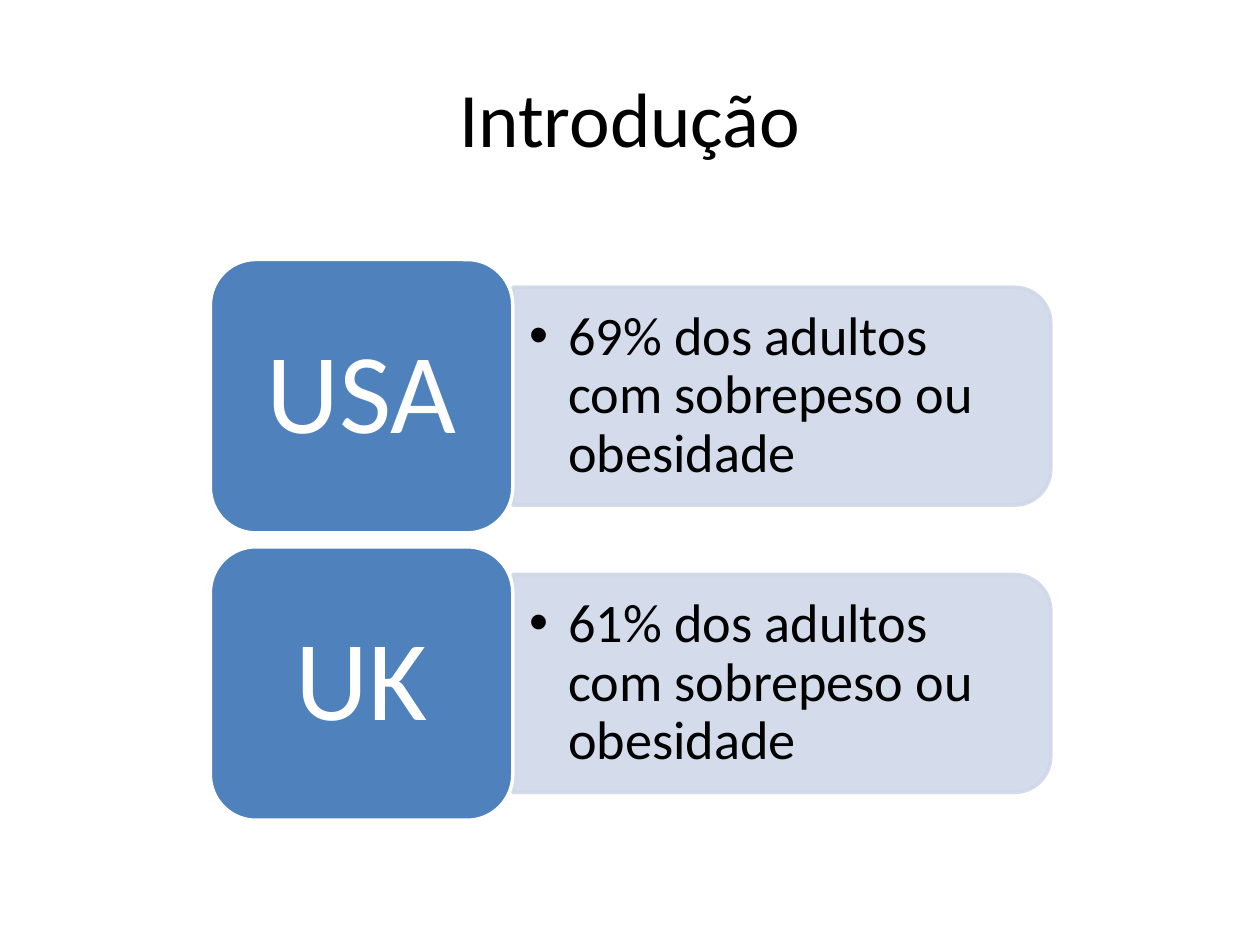
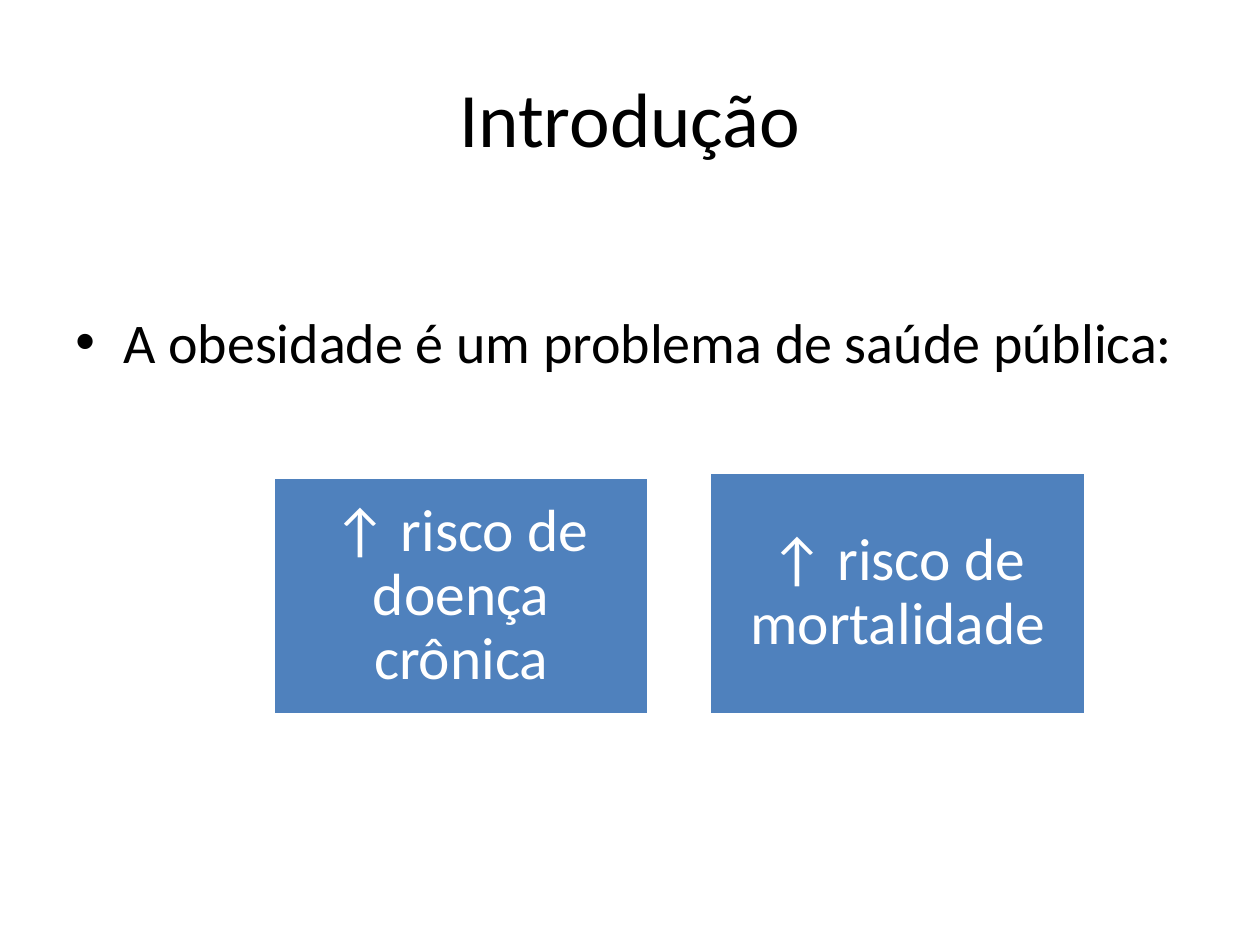
from lxml import etree
from pptx import Presentation
from pptx.dml.color import RGBColor
from pptx.enum.shapes import MSO_SHAPE
from pptx.enum.text import MSO_ANCHOR, PP_ALIGN
from pptx.oxml.ns import qn
from pptx.util import Inches, Pt

BLUE = RGBColor(0x4F, 0x81, 0xBD)
PALE_BLUE = RGBColor(0xD0, 0xD8, 0xE8)
WHITE = RGBColor(0xFF, 0xFF, 0xFF)
BLACK = RGBColor(0, 0, 0)
FONT = "Calibri"
TITLE = "Introdução"
TITLE_BOX = (0.5, 0.3, 9, 1.25)
TITLE_ONLY = 5
RECTANGLE = MSO_SHAPE.RECTANGLE
ROUNDED = MSO_SHAPE.ROUNDED_RECTANGLE
TWO_ROUNDED = MSO_SHAPE.ROUND_2_SAME_RECTANGLE
CENTER, LEFT = PP_ALIGN.CENTER, PP_ALIGN.LEFT
MIDDLE, TOP = MSO_ANCHOR.MIDDLE, MSO_ANCHOR.TOP

COUNTRIES = [
    ("USA", "69% dos adultos com sobrepeso ou obesidade"),
    ("UK", "61% dos adultos com sobrepeso ou obesidade"),
]
COUNTRY_BOX = (1.67, 2.06, 6.67, 2.17)
COUNTRY_STEP = 2.28
LABEL_WIDTH = 2.4
PANEL_HEIGHT = 1.73
RISKS = [
    ("↑ risco de doença crônica", (2.17, 3.79, 2.98, 1.88)),
    ("↑ risco de mortalidade", (5.63, 3.75, 2.99, 1.92)),
]


def set_attributes(target, values):
    """Set each named attribute of the target."""
    for name, value in values.items():
        setattr(target, name, value)


def write_text(shape, text, size, color, alignment=CENTER, anchor=MIDDLE,
               insets=(0.1, 0.05), spacing=0.9, indent=0):
    """Write one paragraph, with a bullet when it has an indent."""
    frame = shape.text_frame
    horizontal, vertical = map(Inches, insets)
    set_attributes(frame, {
        "text": text, "word_wrap": True, "vertical_anchor": anchor,
        "margin_left": horizontal, "margin_right": horizontal,
        "margin_top": vertical, "margin_bottom": vertical,
    })
    paragraph = frame.paragraphs[0]
    set_attributes(paragraph, {"alignment": alignment, "line_spacing": spacing})
    set_attributes(paragraph.runs[0].font, {"name": FONT, "size": Pt(size)})
    paragraph.runs[0].font.color.rgb = color
    if indent:
        properties = paragraph._p.get_or_add_pPr()
        properties.set("marL", str(Inches(indent)))
        properties.set("indent", str(-Inches(indent)))
        etree.SubElement(properties, qn("a:buFont"), typeface="Arial")
        etree.SubElement(properties, qn("a:buChar"), char="•")


def add_block(slide, kind, box, fill, line):
    """Add a filled preset shape with a two-point outline."""
    shape = slide.shapes.add_shape(kind, *map(Inches, box))
    shape.shadow.inherit = False
    shape.fill.solid()
    shape.fill.fore_color.rgb = fill
    shape.line.color.rgb = line
    shape.line.width = Pt(2)
    return shape


def add_bullet(slide, box, text, size, **layout):
    """Add a text box that holds one bulleted paragraph."""
    text_box = slide.shapes.add_textbox(*map(Inches, box))
    write_text(text_box, text, size, BLACK, LEFT, **layout)


def add_titled_slide(presentation):
    """Add a slide with the shared title."""
    slide = presentation.slides.add_slide(presentation.slide_layouts[TITLE_ONLY])
    title = slide.shapes.title
    left, top, width, height = map(Inches, TITLE_BOX)
    set_attributes(title, {"left": left, "top": top, "width": width, "height": height})
    write_text(title, TITLE, 44, BLACK, spacing=1.0)
    return slide


def add_panel(slide, box):
    """Add a translucent panel whose right corners are rounded."""
    left, top, width, height = box
    shift = (width - height) / 2
    panel = add_block(slide, TWO_ROUNDED, (left + shift, top - shift, height, width),
                      PALE_BLUE, PALE_BLUE)
    panel.rotation = 90
    for color in panel.element.spPr.iter(qn("a:srgbClr")):
        etree.SubElement(color, qn("a:alpha"), val="90000")


def add_country(slide, box, country, fact):
    """Add a country label and the panel with its fact."""
    left, top, width, height = box
    panel_left = left + LABEL_WIDTH
    panel_top = top + (height - PANEL_HEIGHT) / 2
    panel_width = width - LABEL_WIDTH
    add_panel(slide, (panel_left, panel_top, panel_width, PANEL_HEIGHT))
    add_bullet(slide, (panel_left, panel_top + 0.08, panel_width - 0.09, PANEL_HEIGHT - 0.16),
               fact, 31, insets=(0.13, 0.06), indent=0.31)
    label = add_block(slide, ROUNDED, (left, top, LABEL_WIDTH, height), BLUE, WHITE)
    write_text(label, country, 65, WHITE, insets=(0.27, 0.14))


def build_countries_slide(presentation):
    """Build the slide on obesity by country."""
    slide = add_titled_slide(presentation)
    left, top, width, height = COUNTRY_BOX
    for row, (country, fact) in enumerate(COUNTRIES):
        add_country(slide, (left, top + row * COUNTRY_STEP, width, height), country, fact)


def build_risks_slide(presentation):
    """Build the slide on the health risks of obesity."""
    slide = add_titled_slide(presentation)
    add_bullet(slide, (0.5, 2.39, 9, 0.64), "A obesidade é um problema de saúde pública:",
               32, anchor=TOP, spacing=1.0, indent=0.38)
    for text, box in RISKS:
        risk = add_block(slide, RECTANGLE, box, BLUE, WHITE)
        write_text(risk, text, 34, WHITE, insets=(0.14, 0.14))


def main():
    """Build and save the presentation."""
    presentation = Presentation()
    set_attributes(presentation, {"slide_width": Inches(10), "slide_height": Inches(7.5)})
    build_countries_slide(presentation)
    build_risks_slide(presentation)
    presentation.save("out.pptx")


if __name__ == "__main__":
    main()
